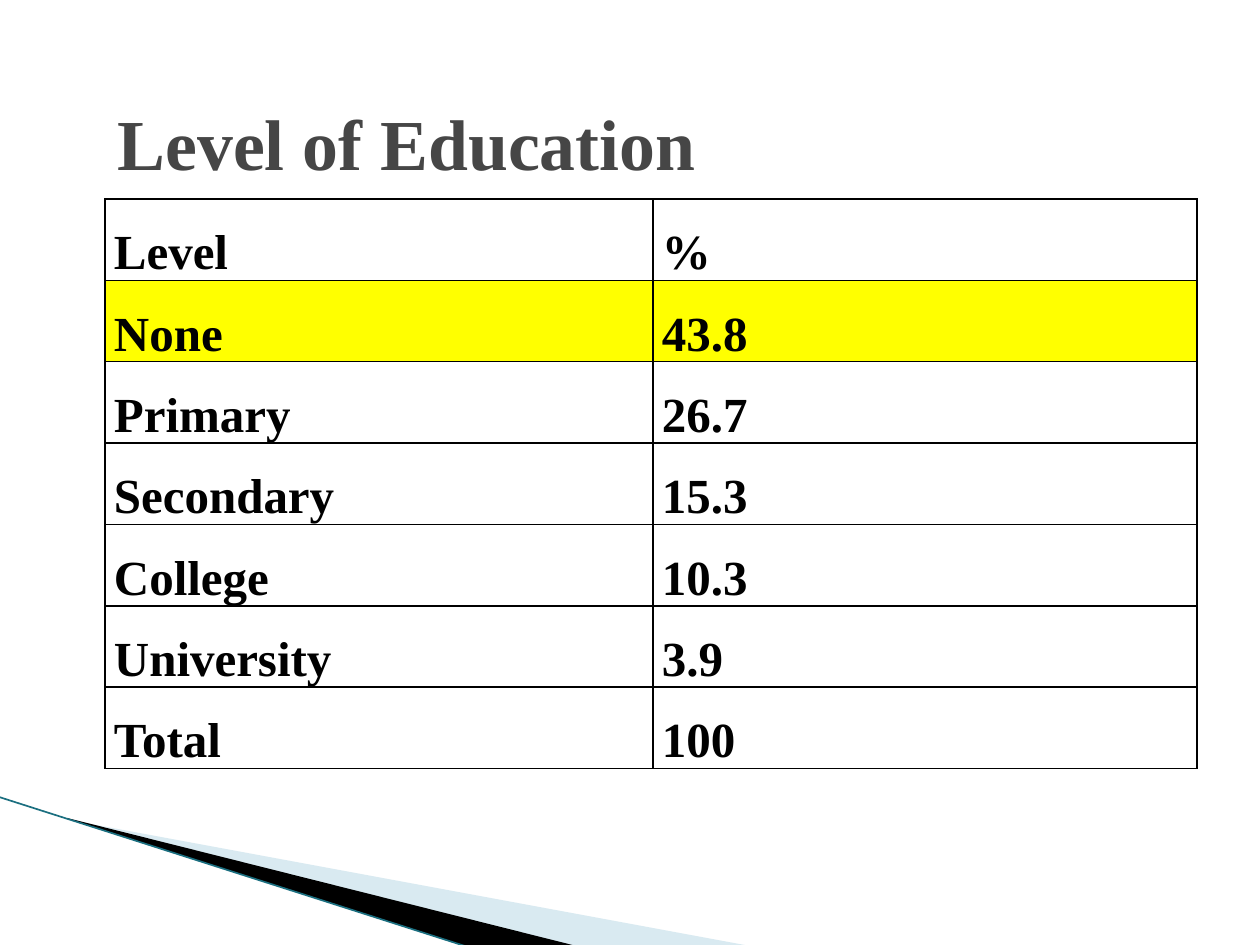
"""Build the Level of Education slide with its table and corner wedges."""
import pptx
import pptx.dml.color
import pptx.enum.shapes
import pptx.enum.text
import pptx.oxml
import pptx.oxml.ns
import pptx.util
from dataclasses import dataclass

PX = 914400 / 126


@dataclass(frozen=True)
class Theme:
    font: str = "Times New Roman"
    title_size: int = 41
    cell_size: int = 28
    title: str = "464646"
    ink: str = "000000"
    highlight: str = "FFFF00"
    pale: str = "A0CBDC"
    edge: str = "1B6F80"


theme = Theme()


def px(length):
    return round(length * PX)


def write(frame, text, size, color, align, spacing=None):
    para = frame.paragraphs[0]
    para.alignment = align
    if spacing:
        para.line_spacing = spacing
    span = para.add_run()
    span.text = text
    span.font.name = theme.font
    span.font.size = pptx.util.Pt(size)
    span.font.bold = True
    span.font.color.rgb = pptx.dml.color.RGBColor.from_string(color)


deck = pptx.Presentation()
deck.slide_width, deck.slide_height = px(1260), px(945)
page = deck.slides.add_slide(deck.slide_layouts[5])

wedges = [
    ([(69, 820), (750, 946), (575, 946), (69, 819)], theme.pale, 40),
    ([(67, 818), (576, 946), (469, 947), (68, 819)], theme.ink, 100),
]
for points, color, opacity in wedges:
    corners = [(px(x), px(y)) for x, y in points]
    builder = page.shapes.build_freeform(*corners[0])
    builder.add_line_segments(corners[1:], close=True)
    wedge = builder.convert_to_shape()
    wedge.shadow.inherit = False
    wedge.line.fill.background()
    wedge.fill.solid()
    wedge.fill.fore_color.rgb = pptx.dml.color.RGBColor.from_string(color)
    if opacity < 100:
        tint = wedge.fill._xPr.find(".//" + pptx.oxml.ns.qn("a:srgbClr"))
        alpha = pptx.oxml.parse_xml(
            f'<a:alpha {pptx.oxml.ns.nsdecls("a")} val="{opacity * 1000}"/>')
        tint.append(alpha)

edge = page.shapes.add_connector(
    pptx.enum.shapes.MSO_CONNECTOR.STRAIGHT, px(-1), px(797), px(468), px(947))
edge.line.width = pptx.util.Pt(0.95)
edge.line.color.rgb = pptx.dml.color.RGBColor.from_string(theme.edge)
edge._element.spPr.append(
    pptx.oxml.parse_xml(f'<a:effectLst {pptx.oxml.ns.nsdecls("a")}/>'))

title = page.shapes.title
title.left, title.top, title.width, title.height = px(105), px(63), px(1102), px(158)
title.text_frame.word_wrap = True
title.text_frame.vertical_anchor = pptx.enum.text.MSO_ANCHOR.MIDDLE
write(title.text_frame, "Level of Education", size=theme.title_size,
      color=theme.title, align=pptx.enum.text.PP_ALIGN.LEFT)

levels = [
    ("Level", "%"),
    ("None", "43.8"),
    ("Primary", "26.7"),
    ("Secondary", "15.3"),
    ("College", "10.3"),
    ("University", "3.9"),
    ("Total", "100"),
]
column_widths = (548, 544)
row_height = 81
table = page.shapes.add_table(
    len(levels), len(column_widths), px(105), px(199),
    px(sum(column_widths)), px(row_height * len(levels))).table
table.first_row = table.horz_banding = False
for column, width in zip(table.columns, column_widths):
    column.width = px(width)

for row, values in enumerate(levels):
    table.rows[row].height = px(row_height)
    for column, value in enumerate(values):
        cell = table.cell(row, column)
        cell.margin_left = cell.margin_right = px(9)
        cell.margin_top = cell.margin_bottom = 0
        write(cell.text_frame, value, size=theme.cell_size, color=theme.ink,
              align=pptx.enum.text.PP_ALIGN.JUSTIFY, spacing=1.5)
        properties = cell._tc.get_or_add_tcPr()
        for side in ("lnL", "lnR", "lnT", "lnB"):
            properties.append(pptx.oxml.parse_xml(
                f'<a:{side} {pptx.oxml.ns.nsdecls("a")} w="{pptx.util.Pt(1)}"><a:solidFill>'
                f'<a:srgbClr val="{theme.ink}"/></a:solidFill></a:{side}>'))
        if values[0] == "None":
            cell.fill.solid()
            cell.fill.fore_color.rgb = pptx.dml.color.RGBColor.from_string(theme.highlight)
        else:
            cell.fill.background()

deck.save("out.pptx")
